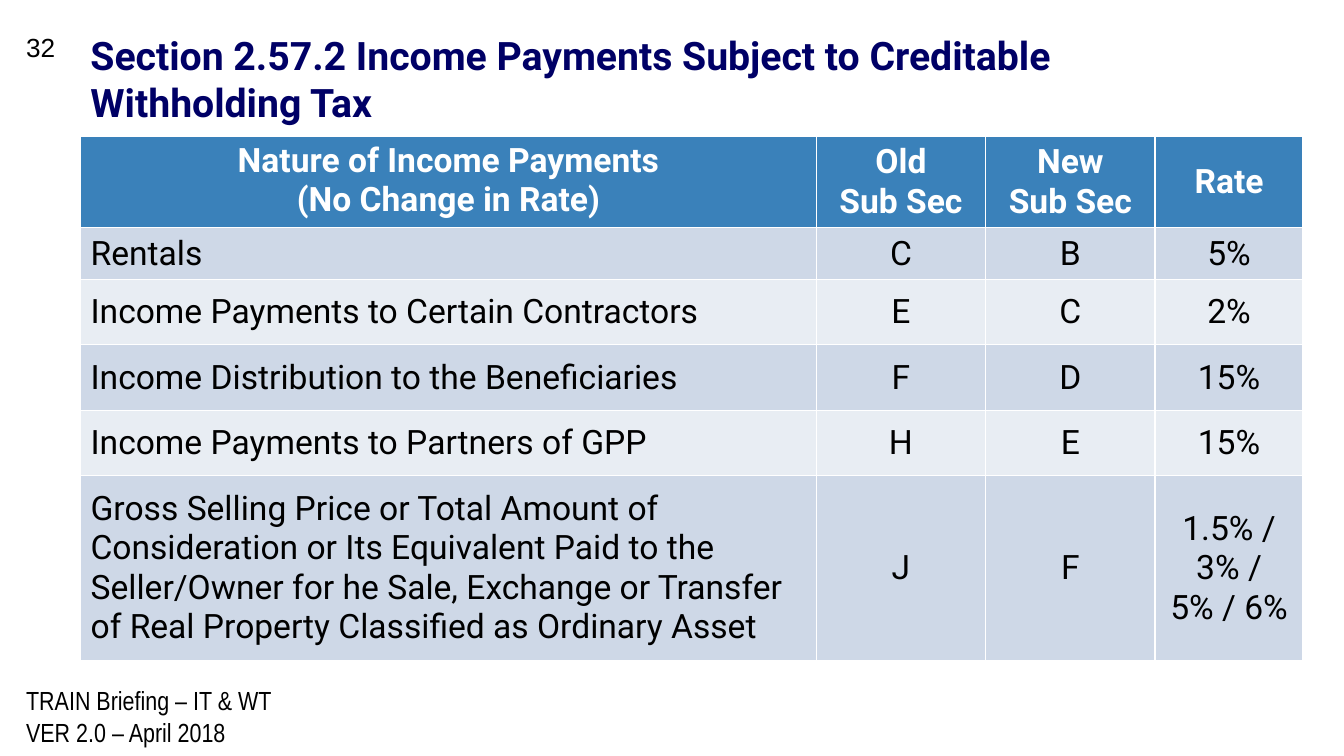
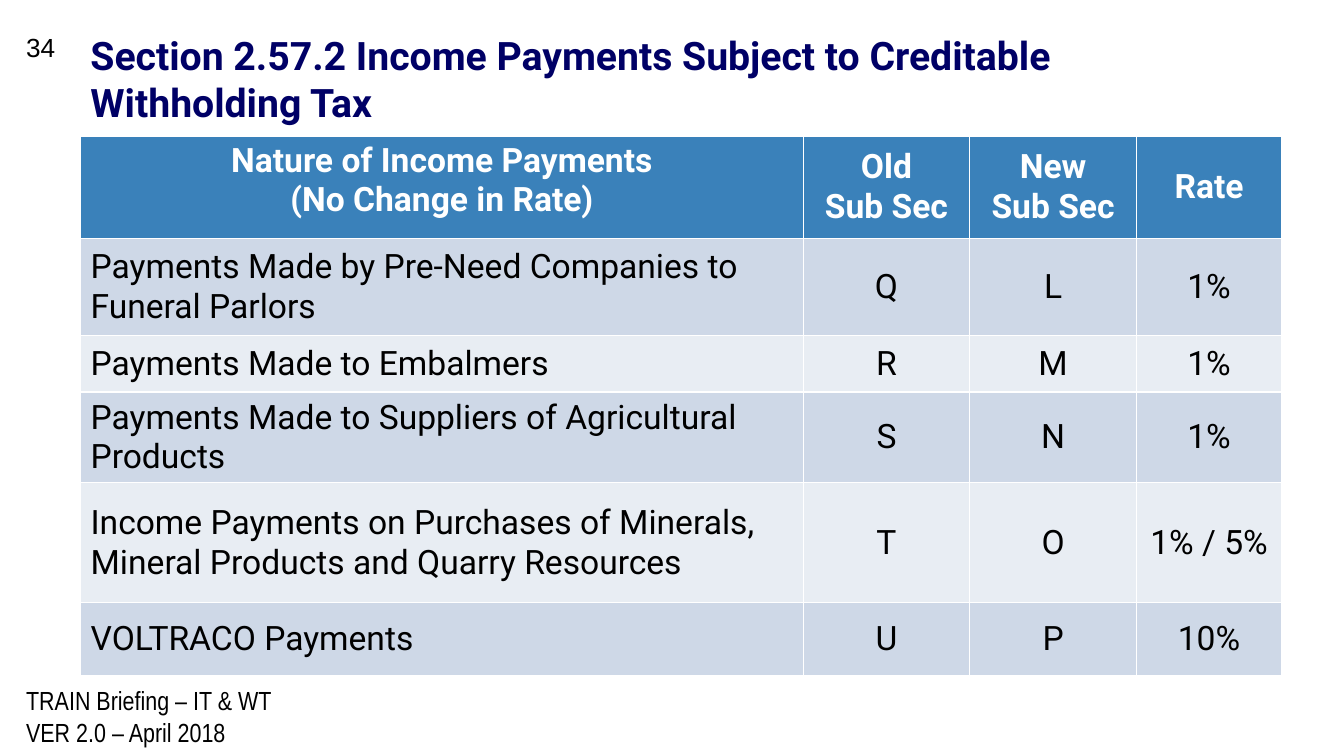
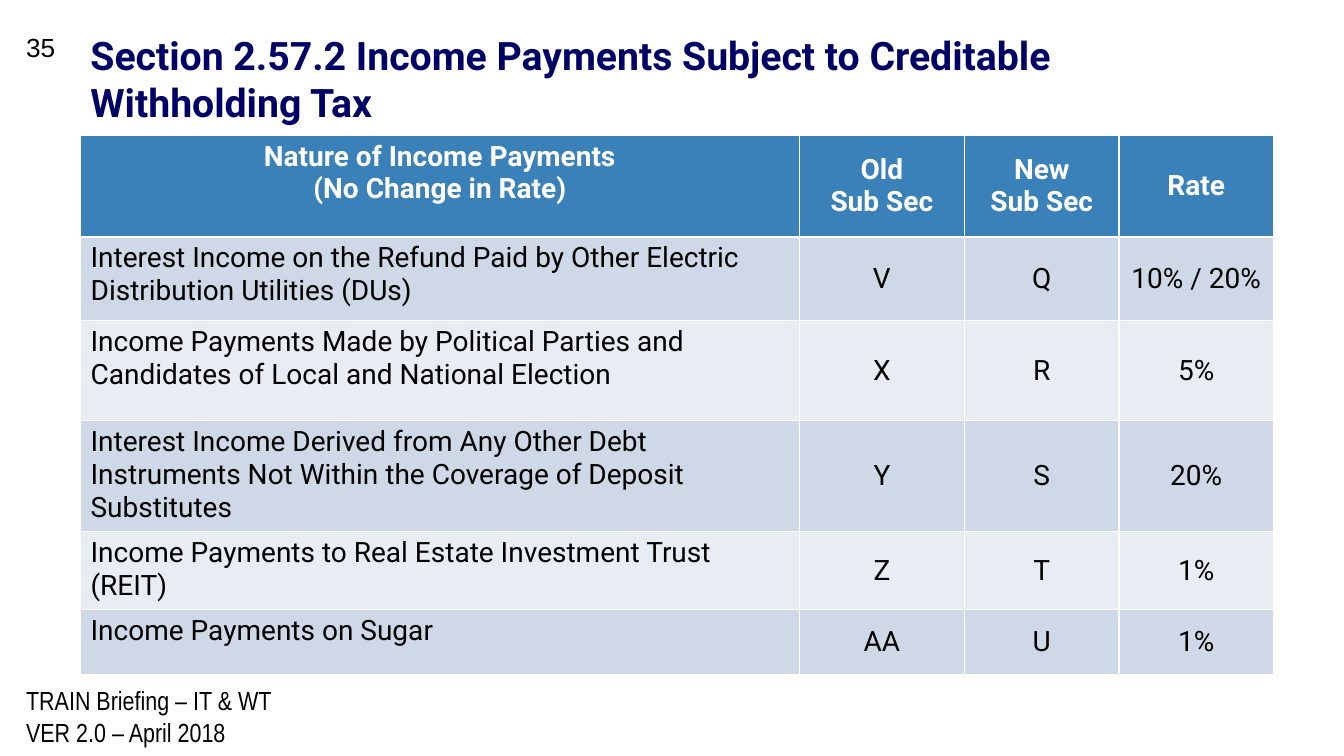
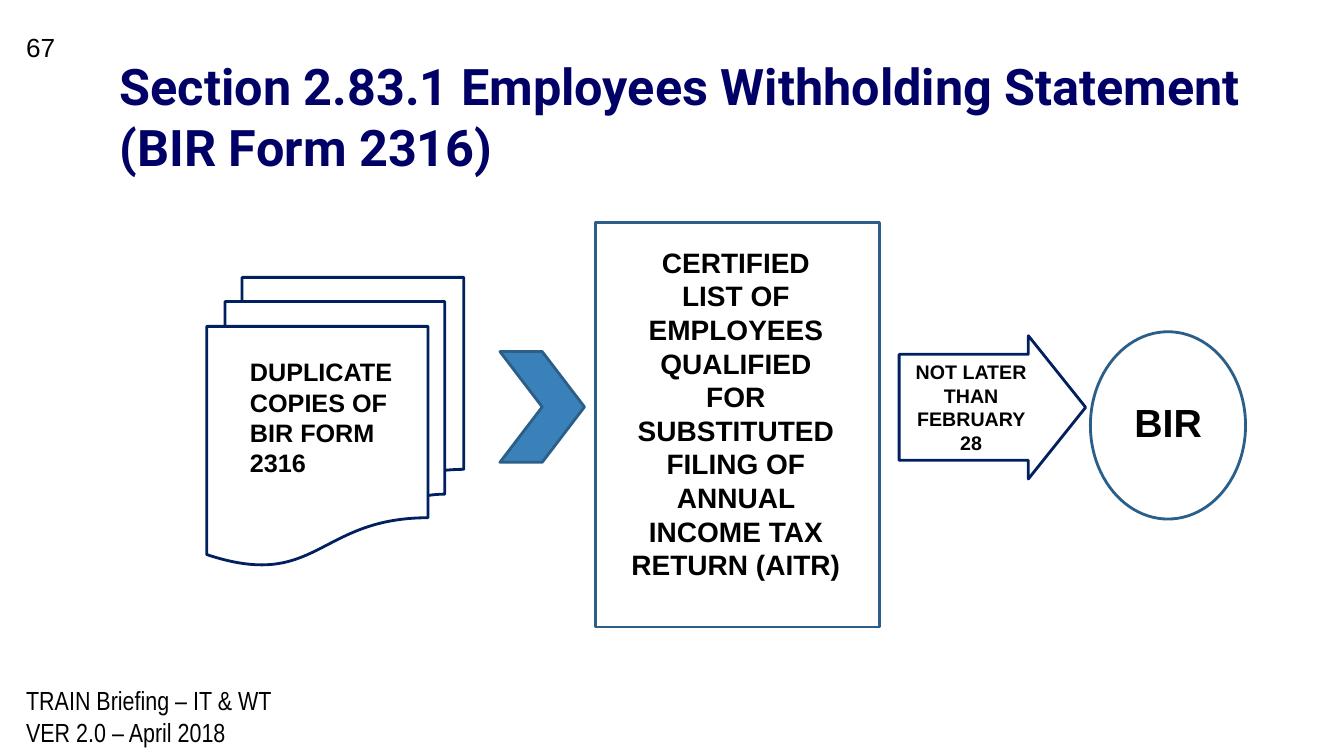
from pptx import Presentation
from pptx import util as u
from pptx.dml.color import RGBColor
from pptx.enum import shapes, text

COLORS = {
    "title": "000066", "text": "000000", "white": "FFFFFF", "header": "3A81BA",
    "band_dark": "CED8E7", "band_light": "E8EDF3", "navy": "002060", "steel": "2B5F8A",
}
LEFT, CENTER, JUSTIFY = text.PP_ALIGN.LEFT, text.PP_ALIGN.CENTER, text.PP_ALIGN.JUSTIFY
TOP, MIDDLE = text.MSO_ANCHOR.TOP, text.MSO_ANCHOR.MIDDLE

FOOTER_FONT = {"name": "Arial Narrow", "size": u.Pt(18.7)}
NUMBER_FONT = {"name": "Arial", "size": u.Pt(18.7)}
TITLE_FONT = {"name": "Roboto", "bold": True}
LABEL_FONT = {"name": "Arial", "bold": True}


def write(frame, lines, font, color="text", align=LEFT, anchor=TOP):
    """Fill a text frame with one formatted paragraph per line."""
    frame.word_wrap = True
    frame.vertical_anchor = anchor
    for index, line in enumerate(lines):
        para = frame.paragraphs[0] if index == 0 else frame.add_paragraph()
        para.alignment = align
        span = para.add_run()
        span.text = line
        for name, value in font.items():
            setattr(span.font, name, value)
        span.font.color.rgb = RGBColor.from_string(COLORS[color])


def add_text(page, place, lines, font, align=LEFT, inset=0.13):
    box = page.shapes.add_textbox(*map(u.Cm, place))
    box.text_frame.margin_top = box.text_frame.margin_bottom = u.Cm(inset)
    write(box.text_frame, lines, font, align=align)
    return box


deck = Presentation()
deck.slide_width, deck.slide_height = u.Cm(33.87), u.Cm(19.05)
layout = deck.slide_layouts[5]
for holder in list(layout.placeholders):
    if holder.placeholder_format.type != shapes.PP_PLACEHOLDER.TITLE:
        layout.shapes.element.remove(holder.element)

# Page number, title, title place, title size
INCOME_TITLE = "Section 2.57.2 Income Payments Subject to Creditable Withholding Tax"
INCOME_PLACE = (2.03, 0.53, 28.78, 2.9)
headings = [(number, INCOME_TITLE, INCOME_PLACE, 28) for number in ("32", "34", "35")]
headings.append(("67", "Section 2.83.1 Employees Withholding Statement (BIR Form 2316)",
                 (2.77, 1.14, 28.78, 3.4), 36))

pages = []
for number, heading, place, size in headings:
    page = deck.slides.add_slide(layout)
    title = page.shapes.title
    title.left, title.top, title.width, title.height = map(u.Cm, place)
    frame = title.text_frame
    frame.auto_size = text.MSO_AUTO_SIZE.NONE
    for side in ("left", "top", "right", "bottom"):
        setattr(frame, f"margin_{side}", u.Cm(0.25))
    write(frame, [heading], {**TITLE_FONT, "size": u.Pt(size)}, "title")
    if not pages:
        footer = add_text(page, (0.41, 17.12, 7.11, 1.9),
                          ["TRAIN Briefing – IT & WT", "VER 2.0 – April 2018"],
                          FOOTER_FONT, JUSTIFY)
        layout.shapes.element.append(footer.element)
    add_text(page, (0.41, 0.53, 6.71, 4.65), [number], NUMBER_FONT, inset=0.25)
    pages.append(page)

# Income payment tables
HEADER = ("Nature of Income Payments\n(No Change in Rate)", "Old\nSub Sec", "New\nSub Sec", "Rate")
tables = [
    {
        "top": 3.43, "size": 24, "anchor": MIDDLE,
        "columns": (18.54, 4.27, 4.27, 3.73),
        "heights": (2.31, 1.3, 1.65, 1.65, 1.65, 4.65),
        "rows": [
            ("Rentals", "C", "B", "5%"),
            ("Income Payments to Certain Contractors", "E", "C", "2%"),
            ("Income Distribution to the Beneficiaries", "F", "D", "15%"),
            ("Income Payments to Partners of GPP", "H", "E", "15%"),
            ("Gross Selling Price or Total Amount of Consideration or Its Equivalent Paid "
             "to the Seller/Owner for he Sale, Exchange or Transfer of Real Property "
             "Classified as Ordinary Asset", "J", "F", "1.5% / 3% / 5% / 6%"),
        ],
    },
    {
        "top": 3.43, "size": 24, "anchor": MIDDLE,
        "columns": (18.21, 4.2, 4.2, 3.66),
        "heights": (2.57, 2.46, 1.42, 2.24, 3.02, 1.83),
        "rows": [
            ("Payments Made by Pre-Need Companies to Funeral Parlors", "Q", "L", "1%"),
            ("Payments Made to Embalmers", "R", "M", "1%"),
            ("Payments Made to Suppliers of Agricultural Products", "S", "N", "1%"),
            ("Income Payments on Purchases of Minerals, Mineral Products and Quarry Resources",
             "T", "O", "1% / 5%"),
            ("VOLTRACO Payments", "U", "P", "10%"),
        ],
    },
    {
        "top": 3.4, "size": 20, "anchor": TOP,
        "columns": (18.11, 4.17, 3.89, 3.89),
        "heights": (2.57, 2.11, 2.51, 2.79, 1.98, 1.63),
        "rows": [
            ("Interest Income on the Refund Paid by Other Electric Distribution Utilities (DUs)",
             "V", "Q", "10% / 20%"),
            ("Income Payments Made by Political Parties and Candidates of Local and "
             "National Election", "X", "R", "5%"),
            ("Interest Income Derived from Any Other Debt Instruments Not Within the "
             "Coverage of Deposit Substitutes", "Y", "S", "20%"),
            ("Income Payments to Real Estate Investment Trust (REIT)", "Z", "T", "1%"),
            ("Income Payments on Sugar", "AA", "U", "1%"),
        ],
    },
]
for page, data in zip(pages, tables):
    rows = [HEADER, *data["rows"]]
    place = (2.03, data["top"], sum(data["columns"]), sum(data["heights"]))
    table = page.shapes.add_table(len(rows), len(HEADER), *map(u.Cm, place)).table
    for column, width in zip(table.columns, data["columns"]):
        column.width = u.Cm(width)
    for r, (values, height) in enumerate(zip(rows, data["heights"])):
        table.rows[r].height = u.Cm(height)
        is_header = r == 0
        fill = "header" if is_header else ("band_light", "band_dark")[r % 2]
        font = {"name": "Roboto", "size": u.Pt(data["size"]), "bold": is_header}
        for c, value in enumerate(values):
            cell = table.cell(r, c)
            cell.fill.solid()
            cell.fill.fore_color.rgb = RGBColor.from_string(COLORS[fill])
            align = CENTER if is_header or c else LEFT
            write(cell.text_frame, value.split("\n"), font, "white" if is_header else "text", align)
            if c:
                cell.vertical_anchor = MIDDLE
            else:
                cell.vertical_anchor = TOP if is_header else data["anchor"]

# Filing flow: shape, place, fill, line
flow_page = pages[-1]
kinds = shapes.MSO_SHAPE
flow = [
    (kinds.FLOWCHART_MULTIDOCUMENT, (5.21, 6.99, 6.48, 7.26), None, "navy"),
    (kinds.RECTANGLE, (15.01, 5.61, 7.16, 10.19), None, "steel"),
    (kinds.OVAL, (27.48, 8.36, 3.91, 4.72), None, "steel"),
    (kinds.CHEVRON, (12.6, 8.86, 2.13, 2.79), "header", "steel"),
    (kinds.RIGHT_ARROW, (22.66, 8.46, 4.7, 3.61), "white", "navy"),
]
for kind, place, fill, line in flow:
    shape = flow_page.shapes.add_shape(kind, *map(u.Cm, place))
    shape.shadow.inherit = False
    if fill:
        shape.fill.solid()
        shape.fill.fore_color.rgb = RGBColor.from_string(COLORS[fill])
    else:
        shape.fill.background()
    shape.line.color.rgb = RGBColor.from_string(COLORS[line])
    shape.line.width = u.Pt(2)
    if kind == kinds.RIGHT_ARROW:
        shape.adjustments[0], shape.adjustments[1] = 0.74, 0.4
        write(shape.text_frame, ["NOT LATER THAN FEBRUARY 28"],
              {**LABEL_FONT, "size": u.Pt(14)}, align=CENTER, anchor=MIDDLE)

labels = [
    ((6.05, 8.86, 4.29, 2.57), "DUPLICATE COPIES OF BIR FORM 2316", 18, LEFT),
    ((15.6, 6.05, 5.89, 8.81), "CERTIFIED LIST OF EMPLOYEES QUALIFIED FOR SUBSTITUTED "
                               "FILING OF ANNUAL INCOME TAX RETURN (AITR)", 20, CENTER),
    ((28.17, 9.91, 2.54, 1.45), "BIR", 28, CENTER),
]
for place, label, size, align in labels:
    add_text(flow_page, place, [label], {**LABEL_FONT, "size": u.Pt(size)}, align)

deck.save("out.pptx")
